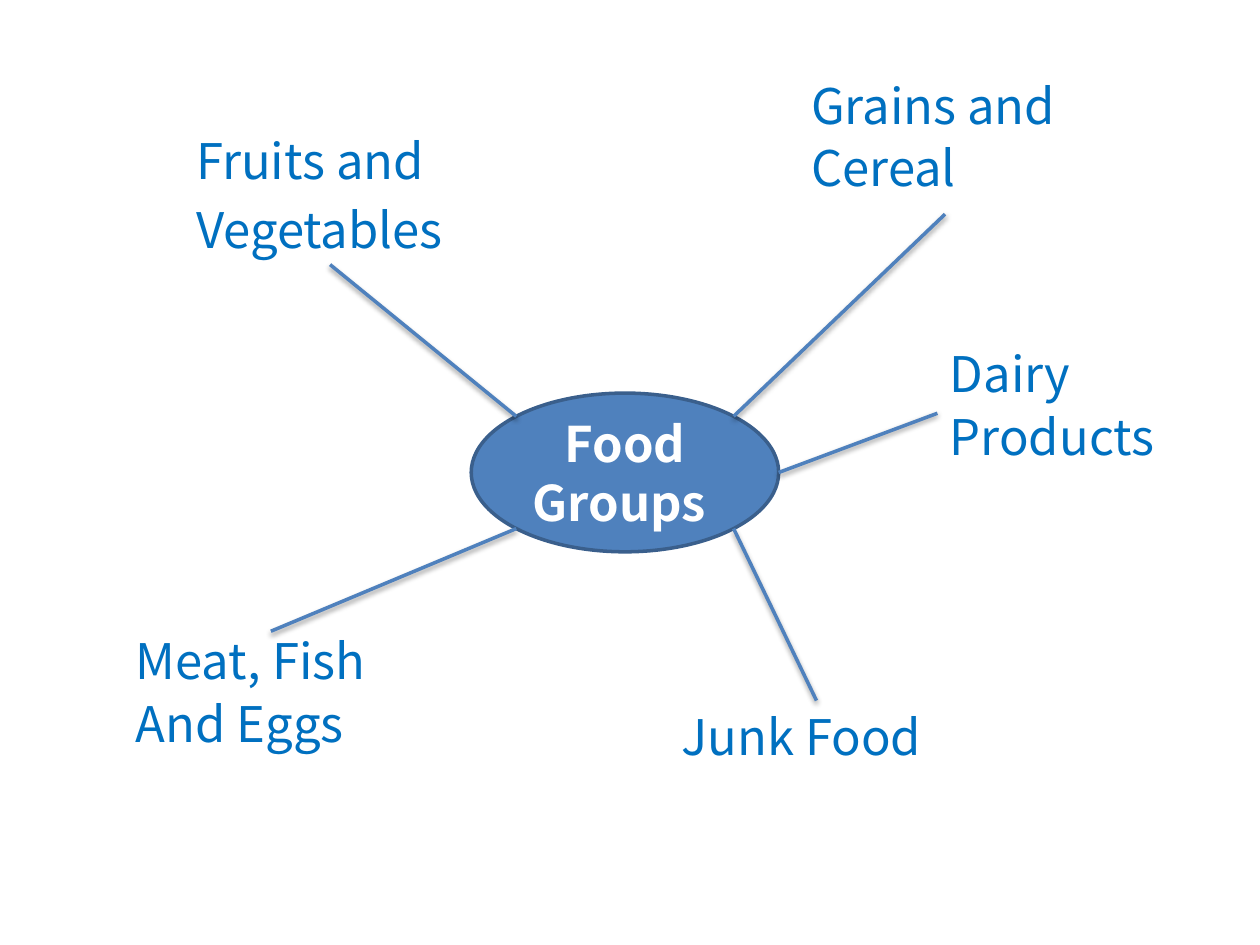
import math

import lxml.etree
import pptx
import pptx.dml.color
import pptx.enum.shapes
import pptx.enum.text
import pptx.oxml
import pptx.oxml.ns
import pptx.util

Inches = pptx.util.Inches
Pt = pptx.util.Pt

COLORS = {"hub": "4F81BD", "edge": "3A5F8C", "label": "0070C0", "white": "FFFFFF"}

SHADOW = f"""<a:effectLst {pptx.oxml.ns.nsdecls("a")}>
  <a:outerShdw blurRad="{Pt(3.1)}" dist="{Pt(1.6)}" dir="5400000" rotWithShape="0">
    <a:srgbClr val="000000"><a:alpha val="38000"/></a:srgbClr>
  </a:outerShdw>
</a:effectLst>"""

HUB_CENTER = (4.96, 3.75)
HUB_SIZE = (2.44, 1.26)

# Each branch: label lines, left, top, height, line spacing, spoke angle, spoke end
BRANCHES = [
    (["Fruits and", "Vegetables"], 1.46, 0.99, 1.1, 1.0, 225, (2.62, 2.1)),
    (["Meat, Fish", "And Eggs"], 0.98, 5.01, 1.1, 0.9, 135, (2.15, 5.01)),
    (["Junk Food"], 5.31, 5.56, 0.71, 1.0, 45, (6.48, 5.56)),
    (["Grains and", "Cereal"], 6.34, 0.6, 1.1, 0.9, 315, (7.5, 1.7)),
    (["Dairy", "Products"], 7.44, 2.73, 1.1, 0.9, 0, (7.44, 3.28)),
]


def rgb(name):
    """Return the named colour."""
    return pptx.dml.color.RGBColor.from_string(COLORS[name])


def write(para, text, *, font, size, color, bold=False):
    """Add formatted text to a paragraph."""
    span = para.add_run()
    span.text = text
    span.font.name = font
    span.font.size = Pt(size)
    span.font.bold = bold
    span.font.color.rgb = rgb(color)


class MindMap:
    """Hold the style and the page being drawn."""

    font = "Noto Sans CJK KR"
    size = 28
    line_width = 2
    label_width = 2.32

    def __init__(self, page):
        """Keep the page to draw on."""
        self.page = page

    def hub(self, text):
        """Draw the central ellipse."""
        (x, y), (width, height) = HUB_CENTER, HUB_SIZE
        oval = self.page.shapes.add_shape(
            pptx.enum.shapes.MSO_SHAPE.OVAL,
            Inches(x - width / 2), Inches(y - height / 2), Inches(width), Inches(height),
        )
        oval.shadow.inherit = False
        oval.fill.solid()
        oval.fill.fore_color.rgb = rgb("hub")
        oval.line.color.rgb = rgb("edge")
        oval.line.width = Pt(self.line_width)
        oval.text_frame.word_wrap = True
        oval.text_frame.vertical_anchor = pptx.enum.text.MSO_ANCHOR.MIDDLE
        para = oval.text_frame.paragraphs[0]
        para.alignment = pptx.enum.text.PP_ALIGN.CENTER
        write(para, text, font=self.font, size=self.size, color="white", bold=True)

    def label(self, lines, left, top, height, spacing):
        """Write one branch label, a paragraph for each line."""
        box = self.page.shapes.add_textbox(
            Inches(left), Inches(top), Inches(self.label_width), Inches(height)
        )
        frame = box.text_frame
        frame.word_wrap = True
        for index, text in enumerate(lines):
            para = frame.add_paragraph() if index else frame.paragraphs[0]
            para.line_spacing = spacing
            if index:
                para.space_before = Pt(0.2 * self.size)
            write(para, text, font=self.font, size=self.size, color="label")

    def spoke(self, angle, end):
        """Draw a line from the hub's rim at an angle to a label."""
        turn = math.radians(angle)
        x = HUB_CENTER[0] + HUB_SIZE[0] / 2 * math.cos(turn)
        y = HUB_CENTER[1] + HUB_SIZE[1] / 2 * math.sin(turn)
        line = self.page.shapes.add_connector(
            pptx.enum.shapes.MSO_CONNECTOR.STRAIGHT,
            Inches(x), Inches(y), Inches(end[0]), Inches(end[1]),
        )
        line.line.color.rgb = rgb("hub")
        line.line.width = Pt(self.line_width)
        properties = line.element.find(pptx.oxml.ns.qn("p:spPr"))
        properties.append(lxml.etree.fromstring(SHADOW))


def main():
    """Build the food groups slide."""
    deck = pptx.Presentation()
    deck.slide_width, deck.slide_height = Inches(10), Inches(7.5)
    mind_map = MindMap(deck.slides.add_slide(deck.slide_layouts[6]))
    mind_map.hub("Food Groups ")
    for lines, left, top, height, spacing, _, _ in BRANCHES:
        mind_map.label(lines, left, top, height, spacing)
    for *_, angle, end in BRANCHES:
        mind_map.spoke(angle, end)
    deck.save("out.pptx")


if __name__ == "__main__":
    main()
